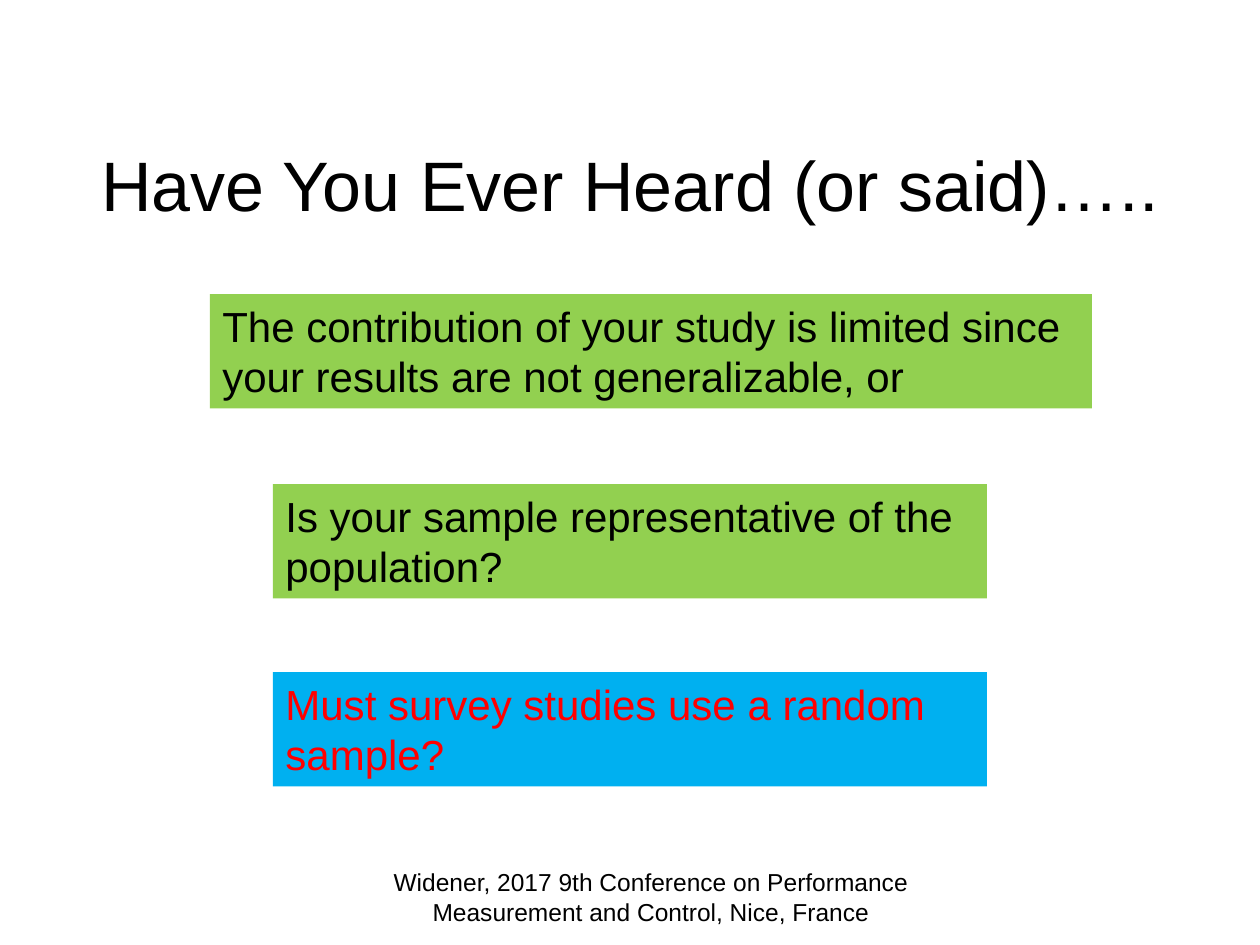
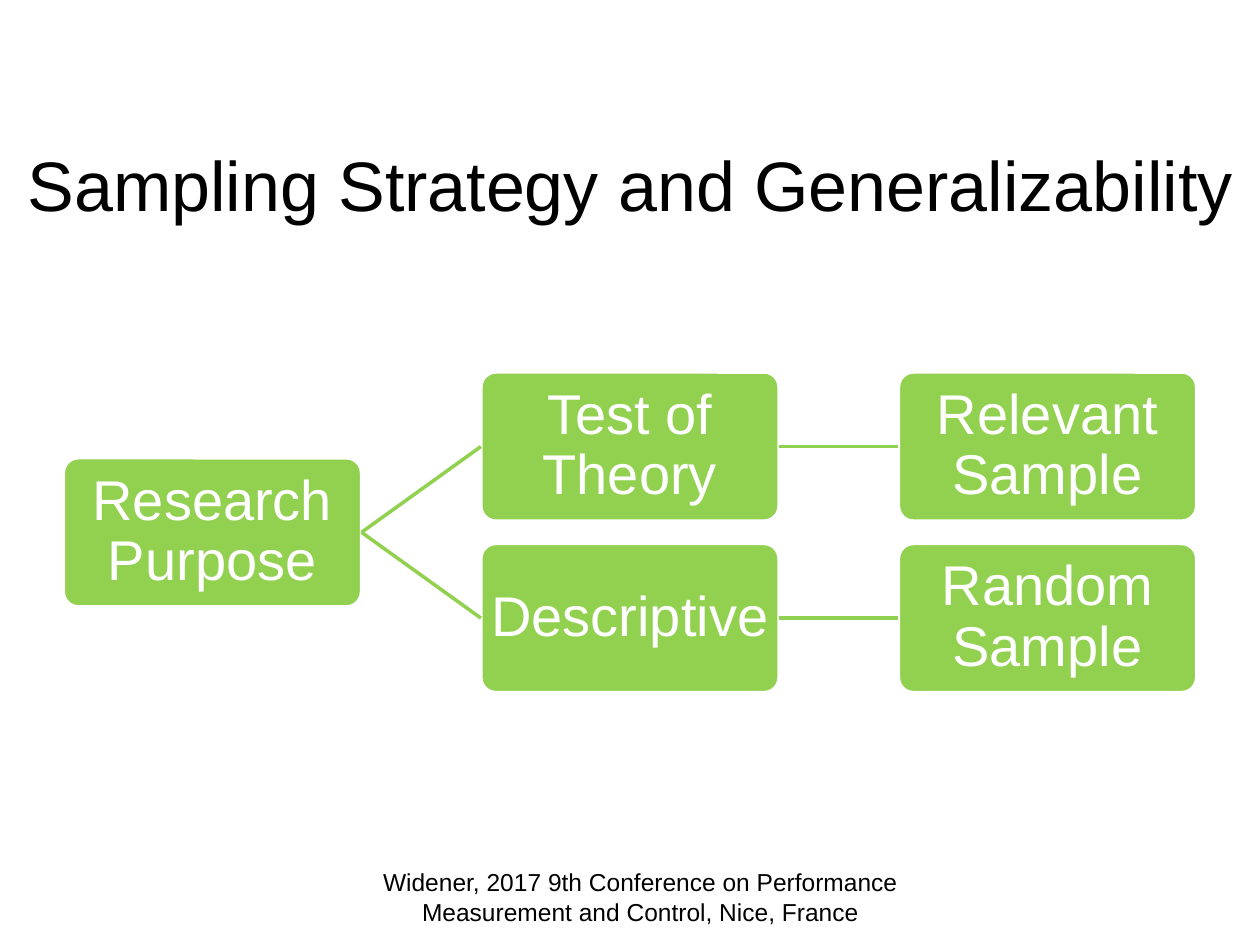
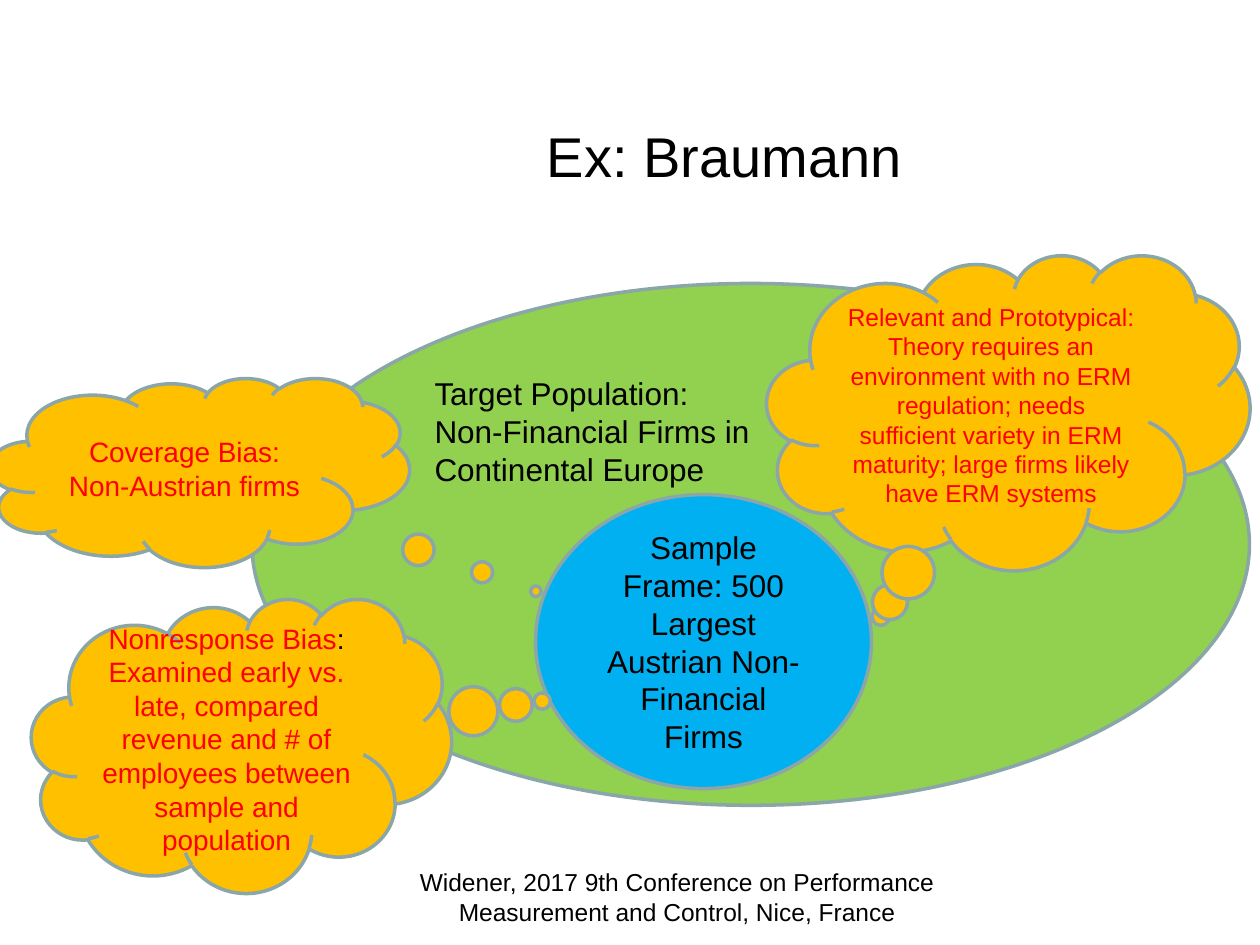
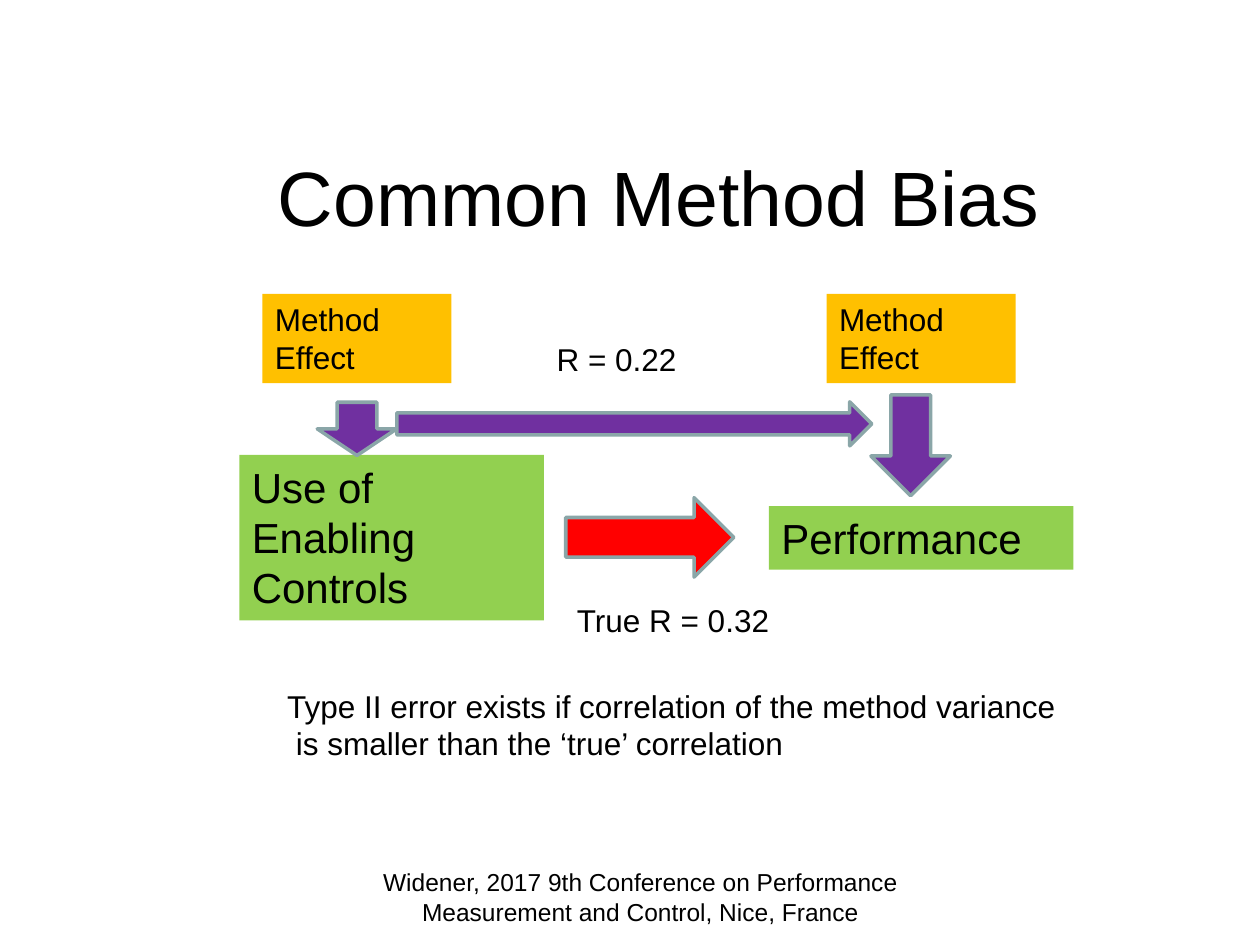
from lxml import etree
from pptx import Presentation
from pptx import util as u
from pptx.dml.color import RGBColor
from pptx.enum import shapes, text
from pptx.oxml.ns import qn

Pt = u.Pt
SHAPE = shapes.MSO_SHAPE
ALIGN = text.PP_ALIGN
ANCHOR = text.MSO_ANCHOR
FIT = text.MSO_AUTO_SIZE

# Shared style
FONT = "Arial"
BLACK = RGBColor(0x00, 0x00, 0x00)
WHITE = RGBColor(0xFF, 0xFF, 0xFF)
GREEN = RGBColor(0x92, 0xD0, 0x50)
BLUE = RGBColor(0x00, 0xB0, 0xF0)
RED = RGBColor(0xFF, 0x00, 0x00)
ORANGE = RGBColor(0xFF, 0xC0, 0x00)
PURPLE = RGBColor(0x70, 0x30, 0xA0)
OUTLINE = RGBColor(0x8A, 0xA6, 0xA8)
LINE_WIDTH = 2
FOOTER = ("Widener, 2017 9th Conference on Performance "
          "Measurement and Control, Nice, France")
CENTRED = {"align": ALIGN.CENTER, "anchor": ANCHOR.MIDDLE}

# Slide 1: (text, box, fill, text colour)
STATEMENTS = [
    ("The contribution of your study is limited since your results are not "
     "generalizable, or", (120, 168, 504, 65.4), GREEN, BLACK),
    ("Is your sample representative of the population?",
     (156, 276.6, 408, 65.4), GREEN, BLACK),
    ("Must survey studies use a random sample?",
     (156, 384, 408, 65.4), BLUE, RED),
]

# Slide 2: a root and its branches, each read from left to right
ROOT = "Research Purpose"
BRANCHES = [("Test of Theory", "Relevant Sample"),
            ("Descriptive", "Random Sample")]
TREE_LEFT, TREE_TOP = 36.2, 212.6
NODE_W, NODE_H = 170.4, 85.2
NODE_MARGIN = 1.4
COLUMN_STEP, ROW_STEP = 238.6, 98

# Slide 3: ellipses (text, box, fill), clouds (runs, box, tail, size)
ELLIPSES = [
    ("", (144, 162, 570, 298.2), GREEN),
    ("Sample Frame: 500 Largest Austrian Non-Financial Firms",
     (306, 282.6, 192, 168), BLUE),
]
CLOUDS = [
    ([("Nonresponse Bias", RED), (": ", BLACK),
      ("Examined early vs. late, compared revenue and # of employees "
       "between sample and population", RED)],
     (18, 342, 240, 168), (0.716, -0.151), 16),
    ([("Coverage Bias: Non-Austrian firms", RED)],
     (-6, 216, 240, 108), (0.801, 0.629), 16),
    ([("Relevant and Prototypical: Theory requires an environment with no ERM "
       "regulation; needs sufficient variety in ERM maturity; large firms "
       "likely have ERM systems", RED)],
     (438.2, 145.6, 276, 180), (-0.264, 0.649), 14),
]
POPULATION = ("Target Population: Non-Financial Firms in Continental Europe",
              (241.2, 210.2, 201, 72.7))

# Slide 4: boxes (text, box, fill, size), arrows (box, rotation, fill)
BOXES = [
    ("Use of Enabling Controls", (136.8, 260, 174, 94.5), GREEN, 24),
    ("Performance", (439.4, 289.2, 174, 36.4), GREEN, 24),
    ("Method Effect", (150, 168, 108, 50.9), ORANGE, 18),
    ("Method Effect", (472.4, 168, 108, 50.9), ORANGE, 18),
]
ARROWS = [
    ((323.3, 284.4, 96, 45.4), 0, RED),
    ((491.6, 231.8, 57.6, 45.4), 90, PURPLE),
    ((188.8, 222.4, 30.4, 45.4), 90, PURPLE),
    ((226.8, 229.6, 271.4, 25.2), 0, PURPLE),
]
NOTES = [("R = 0.22", (311, 190.8, 103, 29.1)),
         ("True R = 0.32", (322.6, 339.8, 139.7, 29.1))]
CONCLUSION = ("Type II error exists if correlation of the method variance "
              "is smaller than the ‘true’ correlation",
              (157, 388.8, 454.6, 50.9))


def write(sp, runs, size, colour=BLACK, align=ALIGN.LEFT, anchor=ANCHOR.TOP,
          grow=False, spacing=None):
    """Fill a shape with one paragraph; runs is text or (text, colour) pairs."""
    if isinstance(runs, str):
        runs = [(runs, colour)]
    tf = sp.text_frame
    frame = {"word_wrap": True, "vertical_anchor": anchor,
             "auto_size": FIT.SHAPE_TO_FIT_TEXT if grow else FIT.NONE}
    for name, value in frame.items():
        setattr(tf, name, value)
    p = tf.paragraphs[0]
    p.alignment = align
    if spacing:
        p.line_spacing = spacing
    for content, run_colour in runs:
        r = p.add_run()
        r.text = content
        r.font.name = FONT
        r.font.size = Pt(size)
        r.font.color.rgb = run_colour
    return p


def add_shape(s, kind, box, fill, line=None):
    sp = s.shapes.add_shape(kind, *map(Pt, box))
    sp.shadow.inherit = False
    sp.fill.solid()
    sp.fill.fore_color.rgb = fill
    if line is None:
        sp.line.fill.background()
    else:
        sp.line.color.rgb = line
        sp.line.width = Pt(LINE_WIDTH)
    return sp


def add_text(s, content, box, size, **style):
    return write(s.shapes.add_textbox(*map(Pt, box)), content, size, **style)


def add_link(s, start, end):
    """Join the right side of one node to the left side of another."""
    link = s.shapes.add_connector(shapes.MSO_CONNECTOR.STRAIGHT, 0, 0, 0, 0)
    link.begin_connect(start, 3)
    link.end_connect(end, 1)
    link.line.color.rgb = GREEN
    link.line.width = Pt(LINE_WIDTH)
    etree.SubElement(link._element.spPr, qn("a:effectLst"))


def add_slide(prs, title, title_box, size, footer_left, footer_width):
    s = prs.slides.add_slide(prs.slide_layouts[5])
    sp = s.shapes.title
    for name, value in zip(("left", "top", "width", "height"), title_box):
        setattr(sp, name, Pt(value))
    write(sp, title, size, **CENTRED)
    add_text(s, FOOTER, (footer_left, 492, footer_width, 37.4), 14,
             align=ALIGN.CENTER)
    return s


def statements_slide(prs):
    s = add_slide(prs, "Have You Ever Heard (or said)…..",
                  (36, 60, 648, 90), 40, 204, 336)
    for content, box, fill, colour in STATEMENTS:
        sp = add_shape(s, SHAPE.RECTANGLE, box, fill)
        write(sp, content, 24, colour, grow=True)


def add_node(s, label, column, row):
    box = (TREE_LEFT + column * COLUMN_STEP, TREE_TOP + row * ROW_STEP,
           NODE_W, NODE_H)
    sp = add_shape(s, SHAPE.ROUNDED_RECTANGLE, box, GREEN, WHITE)
    sp.adjustments[0] = 0.1
    for side in ("left", "top", "right", "bottom"):
        setattr(sp.text_frame, "margin_" + side, Pt(NODE_MARGIN))
    write(sp, label, 32, WHITE, spacing=0.9, **CENTRED)
    return sp


def sampling_slide(prs):
    s = add_slide(prs, "Sampling Strategy and Generalizability",
                  (0, 60, 720, 90), 40, 204, 324)
    root = add_node(s, ROOT, 0, (len(BRANCHES) - 1) / 2)
    for row, branch in enumerate(BRANCHES):
        parent = root
        for column, label in enumerate(branch, 1):
            node = add_node(s, label, column, row)
            add_link(s, parent, node)
            parent = node


def example_slide(prs):
    s = add_slide(prs, "Ex: Braumann", (90, 62.6, 648, 90), 32, 222, 330)
    s.shapes.title.text_frame.margin_bottom = Pt(41)  # raises the title a little
    for content, box, fill in ELLIPSES:
        sp = add_shape(s, SHAPE.OVAL, box, fill, OUTLINE)
        if content:
            write(sp, content, 18, **CENTRED)
    for runs, box, tail, size in CLOUDS:
        sp = add_shape(s, SHAPE.CLOUD_CALLOUT, box, ORANGE, OUTLINE)
        for i, value in enumerate(tail):
            sp.adjustments[i] = value
        write(sp, runs, size, **CENTRED)
    add_text(s, *POPULATION, 18, grow=True)


def method_bias_slide(prs):
    s = add_slide(prs, "Common Method Bias", (52.6, 67, 648, 90), 44, 198, 336)
    for content, box, fill, size in BOXES:
        write(add_shape(s, SHAPE.RECTANGLE, box, fill), content, size, grow=True)
    for box, rotation, fill in ARROWS:
        add_shape(s, SHAPE.RIGHT_ARROW, box, fill, OUTLINE).rotation = rotation
    for content, box in NOTES:
        add_text(s, content, box, 18, grow=True)
    # Hanging indent for the second line
    pPr = add_text(s, *CONCLUSION, 18, grow=True)._p.get_or_add_pPr()
    pPr.set("marL", str(Pt(5)))
    pPr.set("indent", str(-Pt(5)))


def main():
    prs = Presentation()
    prs.slide_width, prs.slide_height = Pt(720), Pt(540)
    for build in (statements_slide, sampling_slide, example_slide,
                  method_bias_slide):
        build(prs)
    prs.save("out.pptx")


if __name__ == "__main__":
    main()
